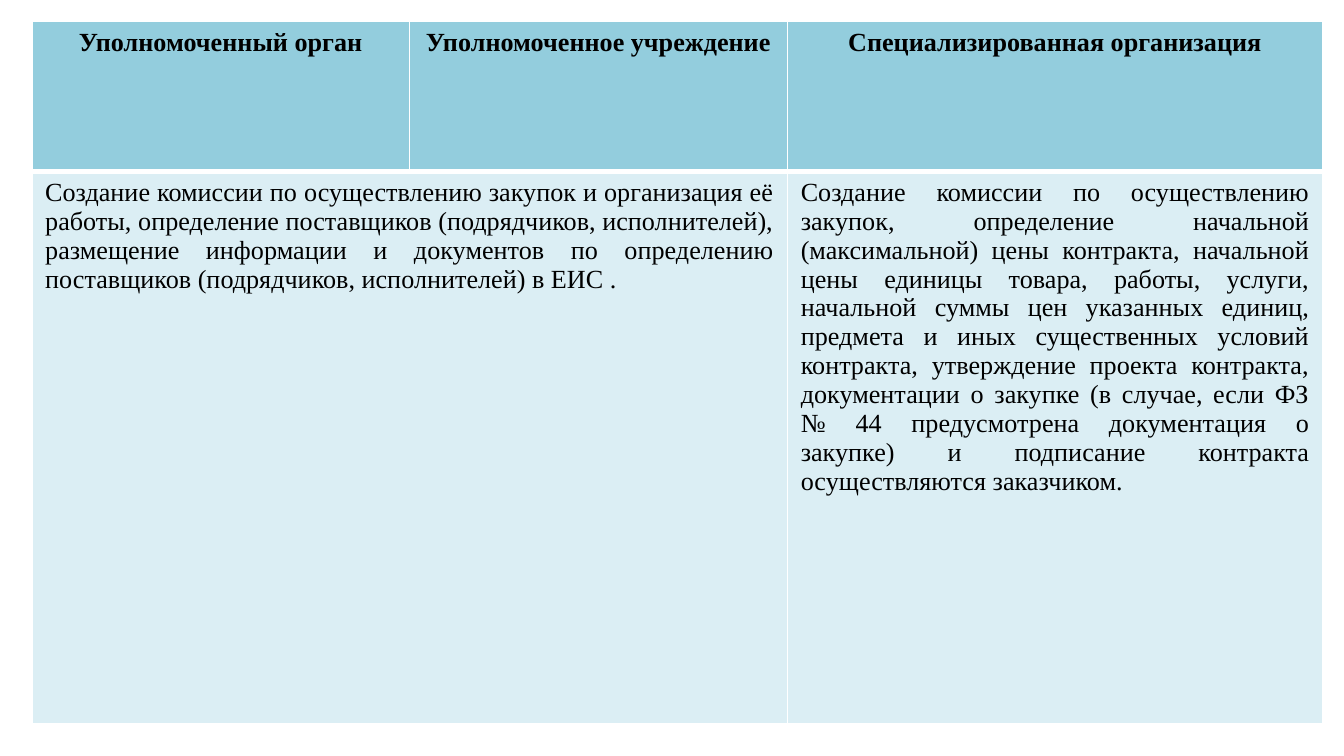
from lxml import etree
from pptx import Presentation
from pptx.dml.color import RGBColor
from pptx.enum.text import PP_ALIGN
from pptx.oxml.ns import qn
from pptx.util import Cm, Pt

CENTER, JUSTIFY = PP_ALIGN.CENTER, PP_ALIGN.JUSTIFY
COLORS = {"header": "93CDDD", "body": "DBEEF4", "text": "000000", "border": "FFFFFF"}
COL_WIDTHS = (7.14, 7.14, 10.12)
ROW_HEIGHTS = (2.83, 10.45)
THIN, THICK = 1, 3

HEADERS = ("Уполномоченный орган", "Уполномоченное учреждение",
           "Специализированная организация")
AUTHORITY_TASKS = (
    "Создание комиссии по осуществлению закупок и организация её работы, "
    "определение поставщиков (подрядчиков, исполнителей), размещение информации "
    "и документов по определению поставщиков (подрядчиков, исполнителей) в ЕИС .")
CUSTOMER_TASKS = (
    "Создание комиссии по осуществлению закупок, определение начальной "
    "(максимальной) цены контракта, начальной цены единицы товара, работы, услуги, "
    "начальной суммы цен указанных единиц, предмета и иных существенных условий "
    "контракта, утверждение проекта контракта, документации о закупке (в случае, "
    "если ФЗ № 44 предусмотрена документация о закупке) и подписание контракта "
    "осуществляются заказчиком.")

ROWS = (
    {"texts": HEADERS, "fill": "header", "bold": True, "align": CENTER,
     "borders": {"L": THIN, "R": THIN, "T": THIN, "B": THICK}},
    {"texts": (AUTHORITY_TASKS, "", CUSTOMER_TASKS), "fill": "body", "bold": False,
     "align": JUSTIFY, "borders": {"L": THIN, "R": THIN, "T": THICK, "B": THIN}},
)


def set_borders(cell, borders):
    tcPr = cell._tc.get_or_add_tcPr()
    for i, (side, width) in enumerate(borders.items()):
        ln = etree.Element(qn(f"a:ln{side}"), w=str(Pt(width)))
        fill = etree.SubElement(ln, qn("a:solidFill"))
        etree.SubElement(fill, qn("a:srgbClr"), val=COLORS["border"])
        tcPr.insert(i, ln)


def write_text(cell, text, bold, align):
    p = cell.text_frame.paragraphs[0]
    p.alignment = align
    r = p.add_run()
    r.text = text
    for name, value in {"name": "Times New Roman", "size": Pt(14), "bold": bold}.items():
        setattr(r.font, name, value)
    r.font.color.rgb = RGBColor.from_string(COLORS["text"])


def add_duties_table(s, left, top, col_widths, row_heights):
    table = s.shapes.add_table(len(row_heights), len(col_widths), Cm(left), Cm(top),
                               Cm(sum(col_widths)), Cm(sum(row_heights))).table
    for col, width in zip(table.columns, col_widths):
        col.width = Cm(width)
    for row, height, style in zip(table.rows, row_heights, ROWS):
        row.height = Cm(height)
        for cell, text in zip(row.cells, style["texts"]):
            cell.fill.solid()
            cell.fill.fore_color.rgb = RGBColor.from_string(COLORS[style["fill"]])
            set_borders(cell, style["borders"])
            if text:
                write_text(cell, text, style["bold"], style["align"])
    table.cell(1, 0).merge(table.cell(1, 1))


def main():
    prs = Presentation()
    prs.slide_width, prs.slide_height = Cm(25.4), Cm(14.29)
    s = prs.slides.add_slide(prs.slide_layouts[6])
    add_duties_table(s, 0.6, 0.41, COL_WIDTHS, ROW_HEIGHTS)
    prs.save("out.pptx")


if __name__ == "__main__":
    main()
